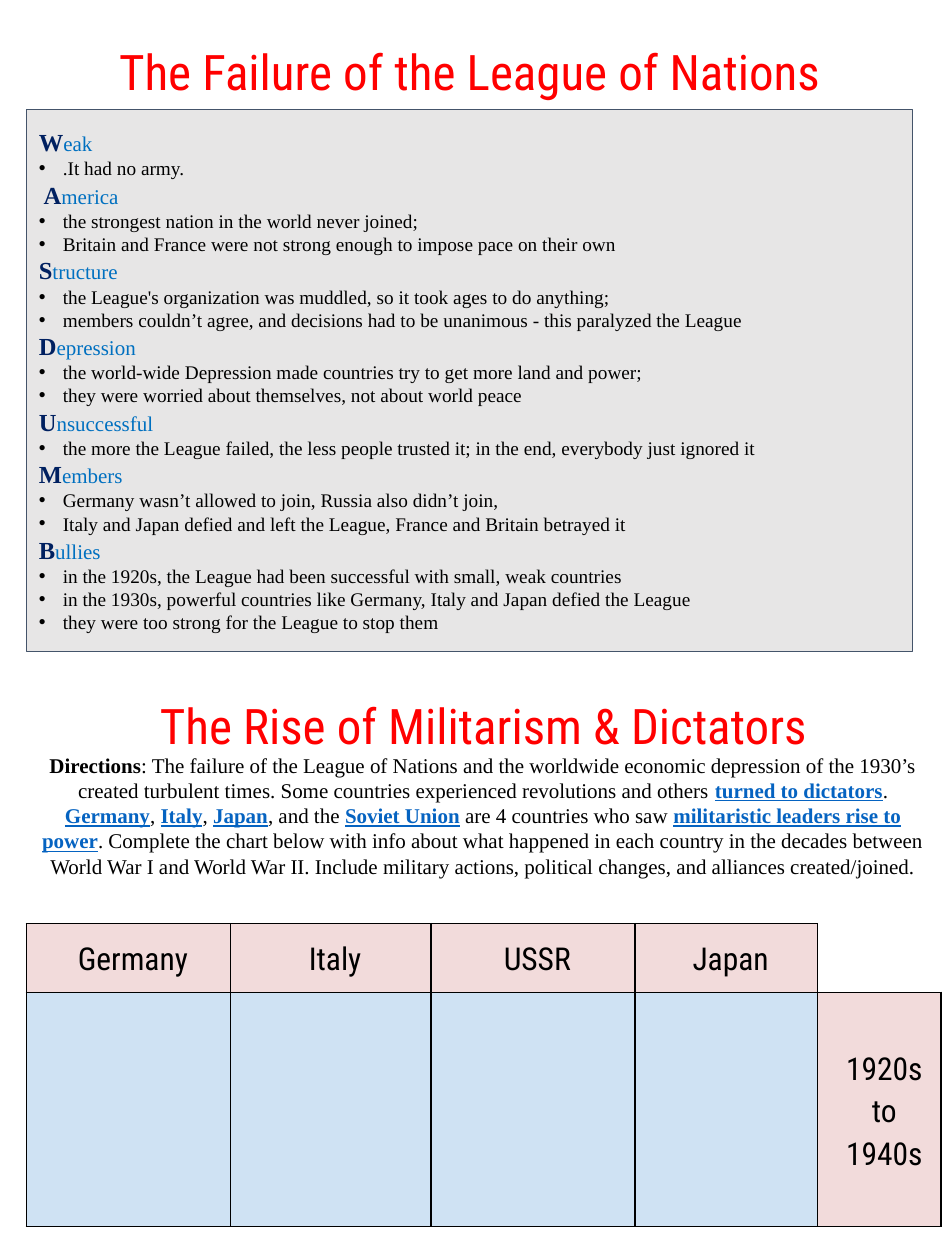
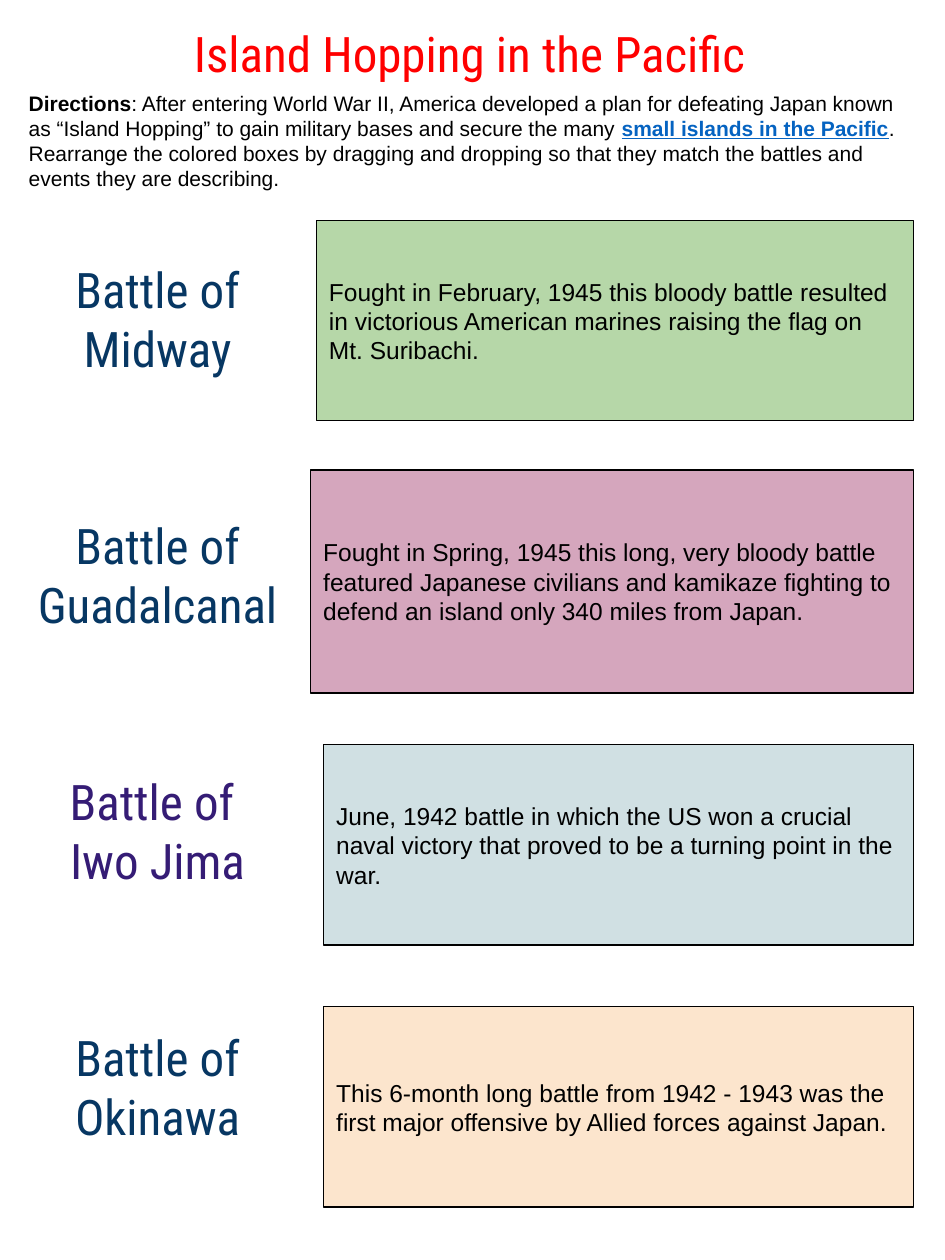
import pptx
import pptx.dml.color
import pptx.enum.shapes
import pptx.enum.text
import pptx.oxml.ns
import pptx.util
from lxml import etree

Inches, Pt = pptx.util.Inches, pptx.util.Pt
ALIGN = pptx.enum.text.PP_ALIGN
ANCHOR = pptx.enum.text.MSO_ANCHOR
qn = pptx.oxml.ns.qn

WIDTH, HEIGHT = Inches(7.5), Inches(10)
HEADING_FONT, SERIF, SANS = "Roboto Condensed", "Times New Roman", "Arial"
COLORS = {
    "title": "FF0000", "text": "000000", "link": "0563C1",
    "initial": "002060", "word": "0070C0",
    "panel": "E7E6E6", "panel line": "44546A",
    "header": "F2DBDB", "blank": "CFE2F3",
    "navy": "073763", "purple": "351C75",
    "green": "B6D7A8", "pink": "D5A6BD", "teal": "D0E0E3", "peach": "FCE5CD",
}
# Positions and sizes are percentages of the slide's width and height.
MARGIN, CONTENT_WIDTH, RIGHT_EDGE = 2.8, 93.75, 96.67

LEAGUE_FAILURES = [
    ("", "W", "eak", [".It had no army."]),
    (" ", "A", "merica", [
        "the strongest nation in the world never joined;",
        "Britain and France were not strong enough to impose pace on their own"]),
    ("", "S", "tructure", [
        "the League's organization was muddled, so it took ages to do anything;",
        "members couldn’t agree, and decisions had to be unanimous - this paralyzed the League"]),
    ("", "D", "epression", [
        "the world-wide Depression made countries try to get more land and power;",
        "they were worried about themselves, not about world peace"]),
    ("", "U", "nsuccessful", [
        "the more the League failed, the less people trusted it; in the end, everybody just ignored it"]),
    ("", "M", "embers", [
        "Germany wasn’t allowed to join, Russia also didn’t join,",
        "Italy and Japan defied and left the League, France and Britain betrayed it"]),
    ("", "B", "ullies", [
        "in the 1920s, the League had been successful with small, weak countries",
        "in the 1930s, powerful countries like Germany, Italy and Japan defied the League",
        "they were too strong for the League to stop them"]),
]
# Bars enclose the highlighted phrases of the directions.
DICTATOR_DIRECTIONS = (
    ": The failure of the League of Nations and the worldwide economic depression of the 1930’s "
    "created turbulent times. Some countries experienced revolutions and others "
    "|turned to dictators|. |Germany|, |Italy|, |Japan|, and the |Soviet Union| are 4 countries "
    "who saw |militaristic leaders rise to power|. Complete the chart below with info about what "
    "happened in each country in the decades between World War I and World War II. Include "
    "military actions, political changes, and alliances created/joined.")
ISLAND_DIRECTIONS = (
    ": After entering World War II, America developed a plan for defeating Japan known as "
    "“Island Hopping” to gain military bases and secure the many |small islands in the Pacific|. "
    "Rearrange the colored boxes by dragging and dropping so that they match the battles and "
    "events they are describing.")
COUNTRIES = ["Germany", "Italy", "USSR", "Japan"]
COLUMN_WIDTHS = [21.6, 21.2, 21.6, 19.33, 13.07]
ROW_HEIGHTS = [5.4, 18.6]
BATTLES = [
    ("Battle of Midway", "navy"),
    ("Battle of Guadalcanal", "navy"),
    ("Battle of \vIwo Jima", "purple"),
    ("Battle of Okinawa", "navy"),
]
# Fill, left, top, height, text
EVENTS = [
    ("green", 33.5, 17.5, 15.9,
     "Fought in February, 1945 this bloody battle resulted in victorious American marines "
     "raising the flag on Mt. Suribachi."),
    ("pink", 32.9, 37.3, 17.7,
     "Fought in Spring, 1945 this long, very bloody battle featured Japanese civilians and "
     "kamikaze fighting to defend an island only 340 miles from Japan."),
    ("teal", 34.27, 59.1, 15.9,
     "June, 1942 battle in which the US won a crucial naval victory that proved to be a "
     "turning point in the war."),
    ("peach", 34.27, 79.9, 15.9,
     "This 6-month long battle from 1942 - 1943 was the first major offensive by Allied "
     "forces against Japan."),
]


def across(percent):
    return int(WIDTH * percent / 100)


def down(percent):
    return int(HEIGHT * percent / 100)


def place(left, top, width, height):
    return across(left), down(top), across(width), down(height)


def rgb(name):
    return pptx.dml.color.RGBColor.from_string(COLORS[name])


def set_font(font, size, name, color="text"):
    font.size, font.name = Pt(size), name
    font.color.rgb = rgb(color)


def set_margins(target, side, vertical):
    target.margin_left = target.margin_right = Inches(side)
    target.margin_top = target.margin_bottom = Inches(vertical)


def add_text_box(slide, area, vertical_margin=0.1, anchor=ANCHOR.MIDDLE):
    frame = slide.shapes.add_textbox(*place(*area)).text_frame
    frame.word_wrap = True
    frame.vertical_anchor = anchor
    set_margins(frame, 0.1, vertical_margin)
    return frame


def add_heading(slide, text, area, color="title"):
    paragraph = add_text_box(slide, area, 0.05, ANCHOR.TOP).paragraphs[0]
    paragraph.text = text
    paragraph.alignment = ALIGN.CENTER
    set_font(paragraph.font, 28, HEADING_FONT, color)


def add_title(slide, text, top, left=MARGIN):
    add_heading(slide, text, (left, top, CONTENT_WIDTH, 5.7))


def add_directions(slide, text, area, font_name, alignment):
    paragraph = add_text_box(slide, area).paragraphs[0]
    paragraph.alignment = alignment
    set_font(paragraph.font, 12, font_name)
    label = paragraph.add_run()
    label.text = "Directions"
    label.font.bold = True
    for index, part in enumerate(text.split("|")):
        run = paragraph.add_run()
        run.text = part
        if index % 2:
            run.font.bold = run.font.underline = True
            run.font.color.rgb = rgb("link")


def add_box(slide, area, fill, line="text"):
    shape = slide.shapes.add_shape(
        pptx.enum.shapes.MSO_SHAPE.RECTANGLE, *place(*area))
    shape.shadow.inherit = False
    shape.fill.solid()
    shape.fill.fore_color.rgb = rgb(fill)
    shape.line.color.rgb = rgb(line)
    shape.line.width = Pt(0.75)
    frame = shape.text_frame
    frame.word_wrap = True
    frame.vertical_anchor = ANCHOR.MIDDLE
    set_margins(frame, 0.1, 0.1)
    frame.paragraphs[0].alignment = ALIGN.LEFT
    return frame


def set_indent(paragraph, left, first=0.0):
    properties = paragraph._p.get_or_add_pPr()
    properties.set("marL", str(Inches(left)))
    properties.set("indent", str(Inches(first)))
    return properties


def add_bullet(frame, text):
    paragraph = frame.add_paragraph()
    paragraph.text = text
    paragraph.alignment = ALIGN.LEFT
    properties = set_indent(paragraph, 0.19, -0.19)
    etree.SubElement(properties, qn("a:buFont"), typeface="Arial")
    etree.SubElement(properties, qn("a:buChar"), char="•")
    set_font(paragraph.font, 11, SERIF)


def add_acrostic(frame, entries):
    """Write each word with a large initial, followed by its bullets."""
    for index, (lead, initial, rest, bullets) in enumerate(entries):
        paragraph = frame.add_paragraph() if index else frame.paragraphs[0]
        paragraph.alignment = ALIGN.LEFT
        for text, size, color in ((lead, 11, "text"), (initial, 14, "initial"), (rest, 12, "word")):
            if text:
                run = paragraph.add_run()
                run.text = text
                run.font.bold = color == "initial"
                set_font(run.font, size, SERIF, color)
        for bullet in bullets:
            add_bullet(frame, bullet)


def set_borders(cell, visible):
    properties = cell._tc.get_or_add_tcPr()
    for side in "LRTB":
        line = etree.SubElement(properties, qn(f"a:ln{side}"), w=str(Pt(1)))
        if side in visible:
            fill = etree.SubElement(line, qn("a:solidFill"))
            etree.SubElement(fill, qn("a:srgbClr"), val=COLORS["text"])
        else:
            etree.SubElement(line, qn("a:noFill"))


def style_cell(cell, fill, text="", indent=0.07):
    set_borders(cell, "LRTB")
    cell.fill.solid()
    cell.fill.fore_color.rgb = rgb(fill)
    set_margins(cell, 0.07, 0.1)
    if text:
        paragraph = cell.text_frame.paragraphs[0]
        paragraph.text = text
        paragraph.alignment = ALIGN.CENTER
        paragraph.line_spacing = 1.15
        set_indent(paragraph, indent)
        set_font(paragraph.font, 18, HEADING_FONT)


def add_country_table(slide, left, top):
    area = place(left, top, sum(COLUMN_WIDTHS), sum(ROW_HEIGHTS))
    table = slide.shapes.add_table(len(ROW_HEIGHTS), len(COLUMN_WIDTHS), *area).table
    table.first_row = table.horz_banding = False
    for column, width in zip(table.columns, COLUMN_WIDTHS):
        column.width = across(width)
    for row, height in zip(table.rows, ROW_HEIGHTS):
        row.height = down(height)
    for index, country in enumerate(COUNTRIES):
        style_cell(table.cell(0, index), "header", country)
        style_cell(table.cell(1, index), "blank")
    corner, period = table.cell(0, len(COUNTRIES)), table.cell(1, len(COUNTRIES))
    set_borders(corner, "LB")
    corner.fill.background()
    style_cell(period, "header", "1920s to 1940s", indent=0.08)
    period.vertical_anchor = ANCHOR.MIDDLE


def build_league_slide(slide):
    add_title(slide, "The Rise of Militarism & Dictators", 54.7, left=4.27)
    add_country_table(slide, MARGIN, 73.3)
    add_directions(slide, DICTATOR_DIRECTIONS, (MARGIN, 58.3, 96.67, 12.8), SERIF, ALIGN.CENTER)
    add_title(slide, "The Failure of the League of Nations", 2.8)
    panel = add_box(slide, (MARGIN, 8.7, CONTENT_WIDTH, 43), "panel", "panel line")
    add_acrostic(panel, LEAGUE_FAILURES)


def build_island_slide(slide):
    add_title(slide, "Island Hopping in the Pacific", 1.4)
    add_directions(slide, ISLAND_DIRECTIONS, (1.73, 7, 96.67, 8.3), SANS, ALIGN.LEFT)
    for index, (battle, color) in enumerate(BATTLES):
        add_heading(slide, battle, (1.87, 20.1 + 20.33 * index, 29.6, 10.7), color)
    for fill, left, top, height, text in EVENTS:
        frame = add_box(slide, (left, top, RIGHT_EDGE - left, height), fill)
        paragraph = frame.paragraphs[0]
        paragraph.text = text
        set_font(paragraph.font, 14, SANS)


def main():
    presentation = pptx.Presentation()
    presentation.slide_width, presentation.slide_height = WIDTH, HEIGHT
    blank = presentation.slide_layouts[6]
    for build in (build_league_slide, build_island_slide):
        build(presentation.slides.add_slide(blank))
    presentation.save("out.pptx")


if __name__ == "__main__":
    main()
